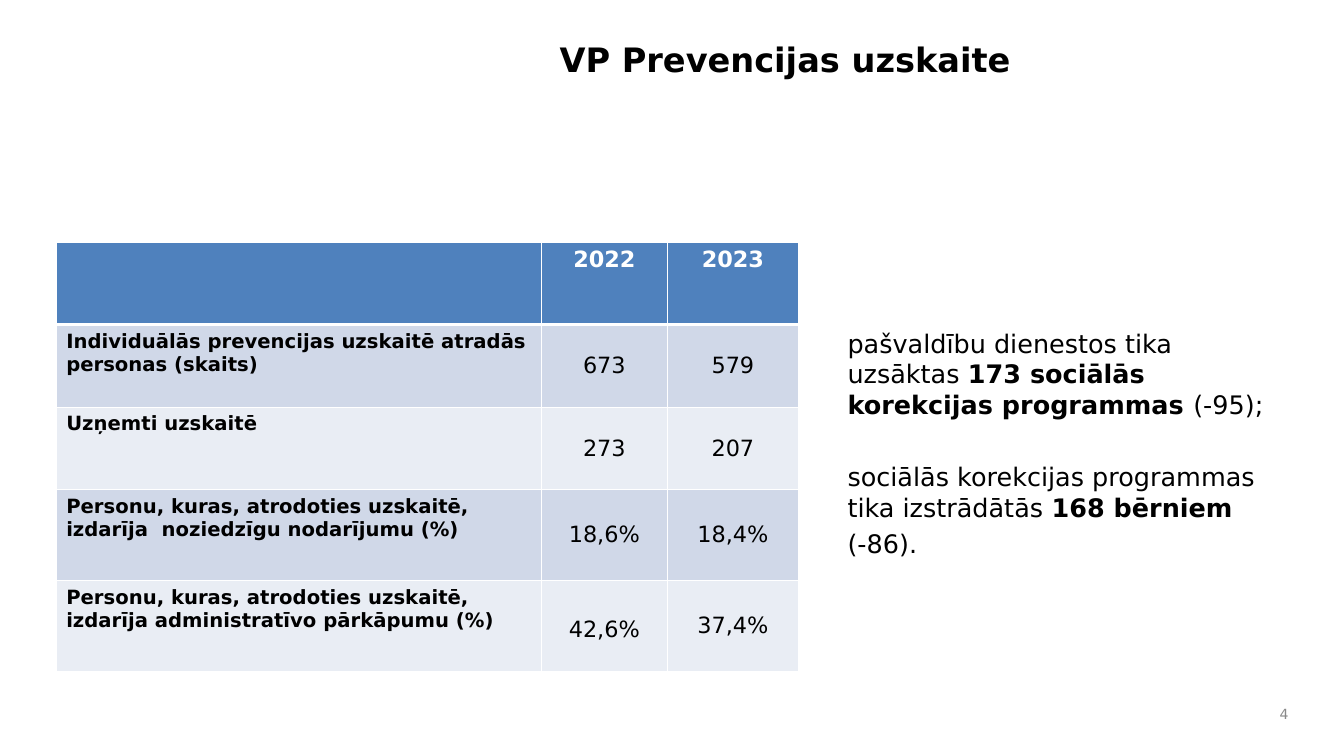
from lxml import etree
from pptx import Presentation
from pptx.dml.color import RGBColor
from pptx.enum.text import MSO_ANCHOR, PP_ALIGN
from pptx.oxml.ns import qn
from pptx.util import Cm, Pt

LEFT, MID, RIGHT = PP_ALIGN.LEFT, PP_ALIGN.CENTER, PP_ALIGN.RIGHT
TOP, HALF = MSO_ANCHOR.TOP, MSO_ANCHOR.MIDDLE

BLACK = RGBColor(0x00, 0x00, 0x00)
WHITE = RGBColor(0xFF, 0xFF, 0xFF)
GREY = RGBColor(0x89, 0x89, 0x89)
BLUE = RGBColor(0x4F, 0x81, 0xBD)
BANDS = RGBColor(0xE9, 0xED, 0xF4), RGBColor(0xD0, 0xD8, 0xE8)

ROWS = [
    ("", "2022", "2023"),
    ("Individuālās prevencijas uzskaitē atradās personas (skaits)", "673", "579"),
    ("Uzņemti uzskaitē", "273", "207"),
    ("Personu, kuras, atrodoties uzskaitē, izdarīja  noziedzīgu nodarījumu (%)", "18,6%", "18,4%"),
    ("Personu, kuras, atrodoties uzskaitē, izdarīja administratīvo pārkāpumu (%)", "42,6%", "37,4%"),
]
WIDTHS = 12.22, 3.18, 3.3
HEIGHTS = 2.08, 2.08, 2.08, 2.29, 2.29

NOTES = [
    ([("pašvaldību dienestos tika uzsāktas ", False),
      ("173 sociālās korekcijas programmas ", True), ("(-95);", False)], 0),
    ([("sociālās korekcijas programmas tika izstrādātās ", False),
      ("168 bērniem", True)], 30),
    ([("(-86).", False)], 4),
]


def assign(item, form):
    for key, value in form.items():
        setattr(item, key, value)


class Page:
    face = "DejaVu Sans"
    pads = {"margin_left": Cm(0.25), "margin_right": Cm(0.25),
            "margin_top": Cm(0.13), "margin_bottom": Cm(0.13)}

    def __init__(self, deck):
        self.slide = deck.slides.add_slide(deck.slide_layouts[5])

    def line(self, para, parts, size, color, align=LEFT, **form):
        assign(para, {"alignment": align, **form})
        for text, bold in parts:
            run = para.add_run()
            run.text = text
            assign(run.font, {"name": self.face, "size": Pt(size), "bold": bold})
            run.font.color.rgb = color

    def title(self, text, box):
        shape = self.slide.shapes.title
        assign(shape, dict(zip(("left", "top", "width", "height"), map(Cm, box))))
        frame = shape.text_frame
        assign(frame, {**self.pads, "word_wrap": True, "vertical_anchor": TOP})
        self.line(frame.paragraphs[0], [(text, True)], 24, BLACK, MID)

    def text(self, paras, box, size, color, align=LEFT, **form):
        frame = self.slide.shapes.add_textbox(*map(Cm, box)).text_frame
        assign(frame, {**self.pads, "word_wrap": True, **form})
        for i, (parts, gap) in enumerate(paras):
            para = frame.add_paragraph() if i else frame.paragraphs[0]
            self.line(para, parts, size, color, align, space_before=Pt(gap))

    def border(self, cell, row):
        props = cell._tc.get_or_add_tcPr()
        thick = {0: "lnB", 1: "lnT"}.get(row)
        for side in ("lnL", "lnR", "lnT", "lnB"):
            width = Pt(3 if side == thick else 1)
            edge = etree.SubElement(props, qn("a:" + side), w=str(int(width)))
            fill = etree.SubElement(edge, qn("a:solidFill"))
            etree.SubElement(fill, qn("a:srgbClr"), val=str(WHITE))

    def table(self, rows, left, top, widths, heights):
        box = map(Cm, (left, top, sum(widths), sum(heights)))
        grid = self.slide.shapes.add_table(len(rows), len(widths), *box).table
        for col, width in zip(grid.columns, widths):
            col.width = Cm(width)
        for row, height in zip(grid.rows, heights):
            row.height = Cm(height)
        for r, row in enumerate(rows):
            for c, text in enumerate(row):
                cell = grid.cell(r, c)
                head, label = r == 0, c == 0
                assign(cell, {**self.pads, "vertical_anchor": TOP if head or label else HALF})
                self.border(cell, r)
                cell.fill.solid()
                cell.fill.fore_color.rgb = BLUE if head else BANDS[r % 2]
                if text:
                    self.line(cell.text_frame.paragraphs[0], [(text, head or label)],
                              14 if label and not head else 16,
                              WHITE if head else BLACK, LEFT if label else MID)
        return grid


def main():
    deck = Presentation()
    assign(deck, {"slide_width": Cm(33.87), "slide_height": Cm(19.05)})
    page = Page(deck)
    page.title("VP Prevencijas uzskaite", (7.11, 0.84, 25.35, 2.97))
    page.text(NOTES, (21.11, 6.1, 11.63, 8.23), 18.2, BLACK, margin_top=Cm(2.16))
    page.text([([("4", False)], 0)], (31.6, 17.58, 1.12, 0.84), 10, GREY, RIGHT,
              vertical_anchor=HALF)
    grid = page.table(ROWS, 1.42, 6.1, WIDTHS, HEIGHTS)
    last = grid.cell(4, 1)
    assign(last, {"margin_left": Cm(0.18), "margin_right": Cm(0.18),
                  "margin_top": 0, "margin_bottom": 0})
    assign(last.text_frame.paragraphs[0], {"line_spacing": 1.25, "space_after": Pt(8)})
    deck.save("out.pptx")


if __name__ == "__main__":
    main()
